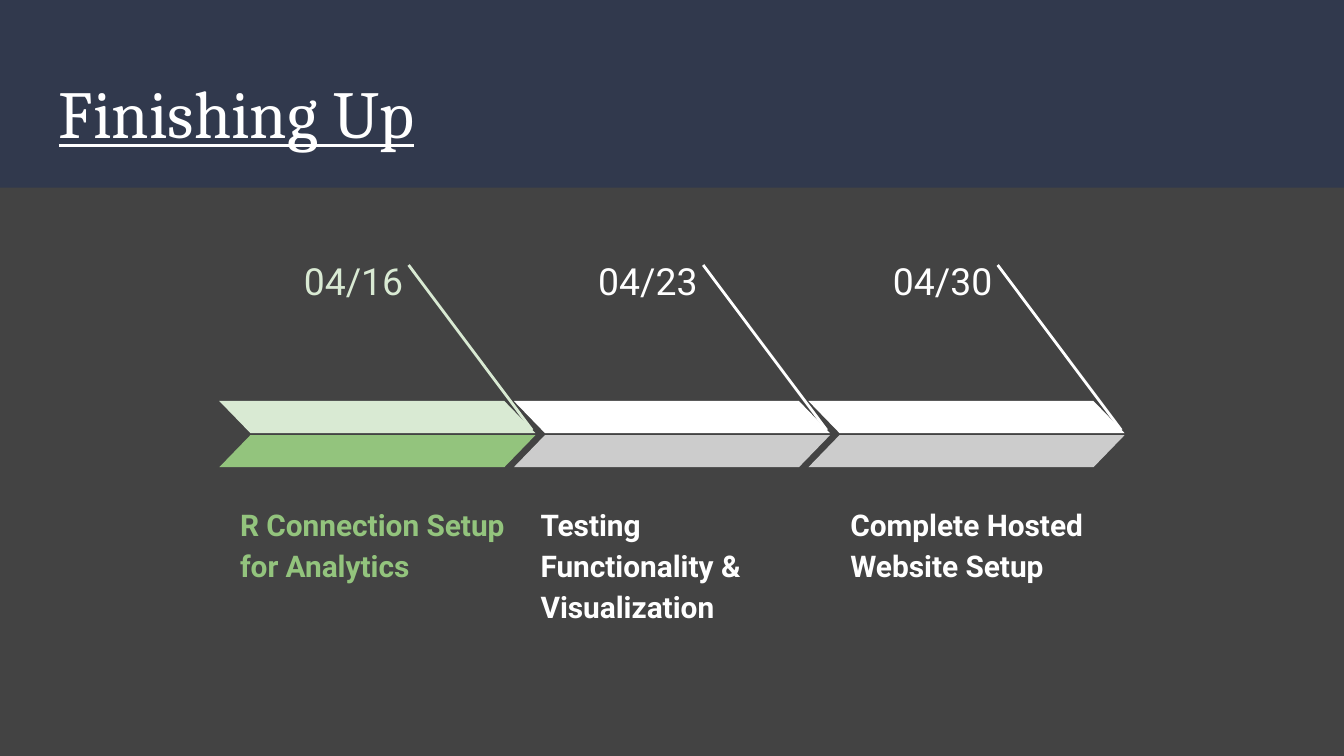
import pptx
import pptx.dml.color
import pptx.enum.shapes
import pptx.enum.text
import pptx.oxml
import pptx.oxml.ns
import pptx.util
from dataclasses import dataclass

Pt = pptx.util.Pt
RGB = pptx.dml.color.RGBColor.from_string
SHAPE = pptx.enum.shapes.MSO_SHAPE
ALIGN = pptx.enum.text.PP_ALIGN


@dataclass
class Theme:
    background: str = "434343"
    band: str = "31394D"
    white: str = "FFFFFF"
    gray: str = "CCCCCC"
    green: str = "93C47D"
    pale_green: str = "D9EAD3"
    title_font: str = "Cambria"
    body_font: str = "Roboto"
    title_size: int = 36
    date_size: int = 20
    caption_size: int = 16


class Deck:
    def __init__(self, prs, theme):
        self.theme = theme
        self.slide = prs.slides.add_slide(prs.slide_layouts[6])
        fill = self.slide.background.fill
        fill.solid()
        fill.fore_color.rgb = RGB(theme.background)
        self.shapes = self.slide.shapes

    def group(self):
        self.shapes = self.slide.shapes.add_group_shape().shapes

    def text(self, box, text, color, font, paragraph=None):
        tf = self.shapes.add_textbox(*map(Pt, box)).text_frame
        frame = {"word_wrap": True,
                 "vertical_anchor": pptx.enum.text.MSO_ANCHOR.TOP}
        for side in ("left", "right", "top", "bottom"):
            frame[f"margin_{side}"] = Pt(7.2)
        p = tf.paragraphs[0]
        r = p.add_run()
        r.text = text
        r.font.color.rgb = RGB(color)
        for target, values in ((tf, frame), (p, paragraph or {}), (r.font, font)):
            for name, value in values.items():
                setattr(target, name, value)

    def shape(self, kind, box, color, adjustment=None, flip=False):
        sp = self.shapes.add_shape(kind, *map(Pt, box))
        sp.shadow.inherit = False
        sp.fill.solid()
        sp.fill.fore_color.rgb = RGB(color)
        sp.line.fill.background()
        if adjustment is not None:
            sp.adjustments[0] = adjustment
        if flip:
            sp._element.spPr.xfrm.set("flipH", "1")

    def line(self, start, end, color):
        cx = self.shapes.add_connector(
            pptx.enum.shapes.MSO_CONNECTOR.STRAIGHT, *map(Pt, start + end))
        cx.line.color.rgb = RGB(color)
        cx.line.width = Pt(1.5)
        cx._element.spPr.append(pptx.oxml.parse_xml(
            f'<a:effectLst {pptx.oxml.ns.nsdecls("a")}/>'))

    def milestone(self, left, date, date_width, caption, caption_box, colors):
        light, dark, caption_color = colors
        t = self.theme
        self.group()
        self.text((left + 105.6 - date_width, 127.5, date_width, 29), date, light,
                  {"name": t.body_font, "size": Pt(t.date_size)},
                  {"alignment": ALIGN.RIGHT, "line_spacing": 1.15,
                   "space_after": Pt(16)})
        caption_left, caption_width = caption_box
        self.text((caption_left, 261.2, caption_width, 88.5), caption, caption_color,
                  {"name": t.body_font, "size": Pt(t.caption_size), "bold": True},
                  {"line_spacing": 1.15})
        self.line((left + 101.4, 142), (left + 167.6, 230.4), light)
        for top, color, flip in ((214.8, light, True), (233.1, dark, False)):
            self.shape(SHAPE.PARALLELOGRAM, (left, top, 169.4, 17.2),
                       color, 0.97, flip)


def main():
    prs = pptx.Presentation()
    prs.slide_width, prs.slide_height = Pt(720), Pt(405)
    t = Theme()
    s = Deck(prs, t)
    s.shape(SHAPE.RECTANGLE, (0, 0, 720, 100.5), t.band)
    s.text((24.5, 31, 671, 49), "Finishing Up", t.white,
           {"name": t.title_font, "size": Pt(t.title_size), "underline": True})

    done = (t.pale_green, t.green, t.green)
    planned = (t.white, t.gray, t.white)
    milestones = (
        ("04/16", 82, "R Connection Setup for Analytics", (121.5, 162), done),
        ("04/23", 91.5, "Testing Functionality & Visualization", (282.5, 154.8), planned),
        ("04/30", 84.5, "Complete Hosted Website Setup", (448.5, 139), planned),
    )
    for i, milestone in enumerate(milestones):
        s.milestone(117.5 + 157.8 * i, *milestone)
    prs.save("out.pptx")


if __name__ == "__main__":
    main()
